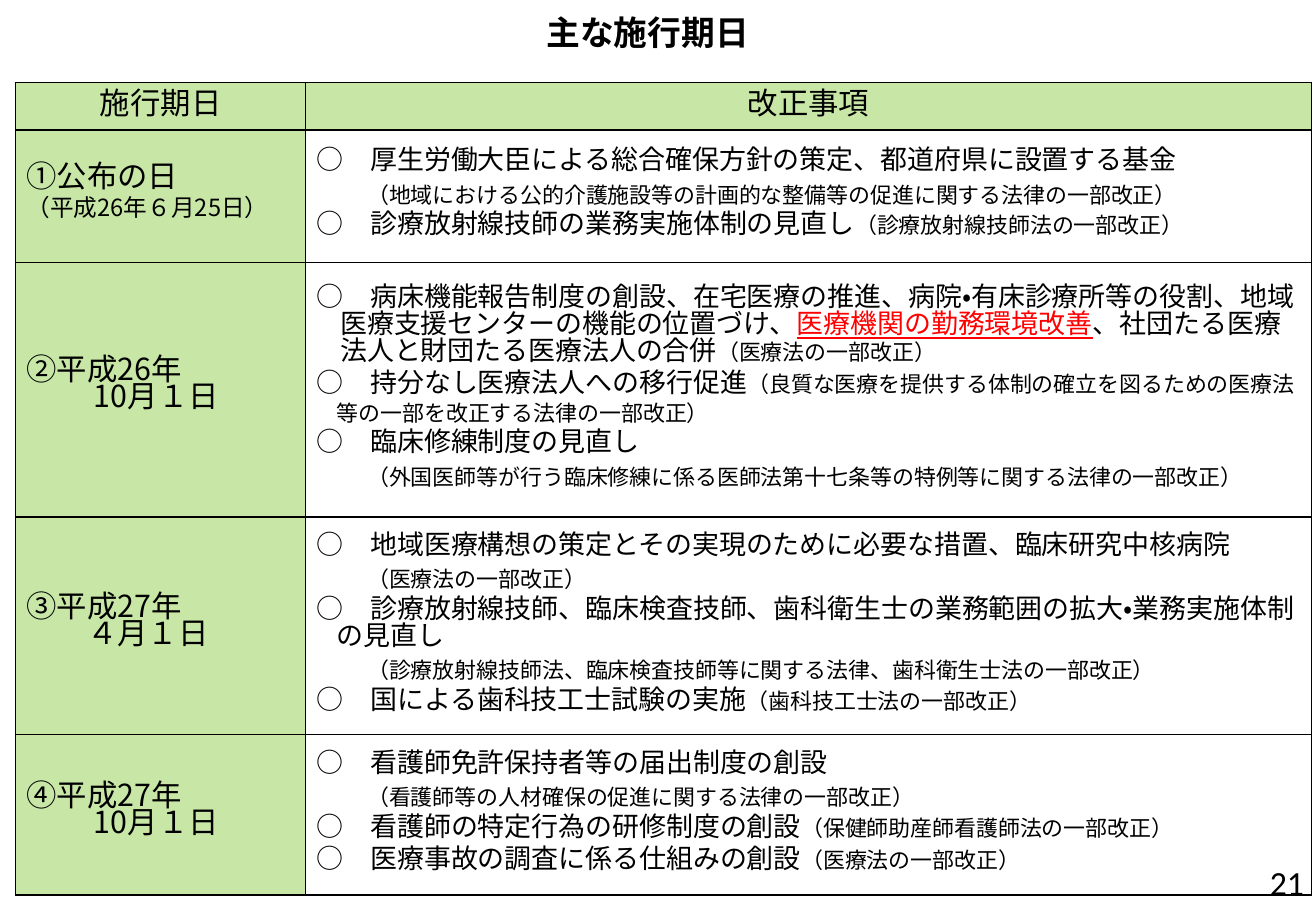
from dataclasses import dataclass

from lxml import etree
from pptx import Presentation
from pptx import util as u
from pptx.dml.color import RGBColor
from pptx.enum import lang, text
from pptx.oxml import ns

LEFT, CENTER, RIGHT, JUSTIFY = (
    text.PP_ALIGN.LEFT, text.PP_ALIGN.CENTER, text.PP_ALIGN.RIGHT, text.PP_ALIGN.JUSTIFY)


@dataclass(frozen=True)
class Theme:
    ink: str = "000000"
    alert: str = "FF0000"
    paper: str = "FFFFFF"
    green: str = "92D050"
    green_alpha: int = 50000
    heading_font: str = "Noto Sans CJK JP"
    body_font: str = "Calibri"
    title: float = 20
    date: float = 18
    item: float = 16
    small_date: float = 14
    law: float = 13
    leading: float = 16
    gap: float = 3
    border: float = 1


THEME = Theme()


@dataclass(frozen=True)
class Run:
    words: str
    size: float = THEME.item
    font: str = THEME.body_font
    color: str = THEME.ink
    bold: bool = False
    underline: bool = False


@dataclass(frozen=True)
class Line:
    runs: tuple[Run, ...]
    align: text.PP_ALIGN = LEFT
    margin: float = 0
    first: float = 0
    after: float = 0
    leading: float | None = THEME.leading


@dataclass(frozen=True)
class Stage:
    height: float
    dates: tuple[Line, ...]
    reforms: tuple[Line, ...]


def date(words: str, align: text.PP_ALIGN = LEFT, margin: float = 0,
         size: float = THEME.date) -> Line:
    return Line((Run(words, size, THEME.heading_font),), align, margin)


def law(words: str) -> Run:
    return Run(words, THEME.law)


def item(words: str, *more: Run, hang: float = 0) -> Line:
    return Line((Run("○　" + words), *more), margin=hang, first=-hang, after=THEME.gap)


def law_line(words: str) -> Line:
    return Line((law(words),), margin=30, after=THEME.gap)


def two_line_date(year: str, day: str, margin: float) -> tuple[Line, ...]:
    return date(year, JUSTIFY), date(day, JUSTIFY, margin)


HEADER_HEIGHT = 28
COLUMN_WIDTHS = (172, 596)
HEADERS = ("施行期日", "改正事項")
STAGES = (
    Stage(78.5,
          (date("①公布の日"), date("（平成26年６月25日）", size=THEME.small_date)),
          (item("厚生労働大臣による総合確保方針の策定、都道府県に設置する基金"),
           law_line("（地域における公的介護施設等の計画的な整備等の促進に関する法律の一部改正）"),
           item("診療放射線技師の業務実施体制の見直し", law("（診療放射線技師法の一部改正）")))),
    Stage(151,
          two_line_date("②平成26年", "10月１日", 40),
          (item("病床機能報告制度の創設、在宅医療の推進、病院・有床診療所等の役割、"
                "地域医療支援センターの機能の位置づけ、",
                Run("医療機関の勤務環境改善", color=THEME.alert, underline=True),
                Run("、社団たる医療法人と財団たる医療法人の合併"),
                law("（医療法の一部改正）"), hang=14),
           item("持分なし医療法人への移行促進",
                law("（良質な医療を提供する体制の確立を図るための医療法等の一部を改正する法律の一部改正）"),
                hang=12),
           item("臨床修練制度の見直し", hang=12),
           law_line("（外国医師等が行う臨床修練に係る医師法第十七条等の特例等に関する法律の一部改正）"))),
    Stage(129,
          two_line_date("③平成27年", "４月１日", 36),
          (item("地域医療構想の策定とその実現のために必要な措置、臨床研究中核病院"),
           law_line("（医療法の一部改正）"),
           item("診療放射線技師、臨床検査技師、歯科衛生士の業務範囲の拡大・業務実施体制の見直し", hang=12),
           law_line("（診療放射線技師法、臨床検査技師等に関する法律、歯科衛生士法の一部改正）"),
           item("国による歯科技工士試験の実施", law("（歯科技工士法の一部改正）")))),
    Stage(95,
          two_line_date("④平成27年", "10月１日", 40),
          (item("看護師免許保持者等の届出制度の創設"),
           law_line("（看護師等の人材確保の促進に関する法律の一部改正）"),
           item("看護師の特定行為の研修制度の創設", law("（保健師助産師看護師法の一部改正）")),
           item("医療事故の調査に係る仕組みの創設", law("（医療法の一部改正）")))),
)


def write(frame, lines: tuple[Line, ...]) -> None:
    for index, line in enumerate(lines):
        paragraph = frame.add_paragraph() if index else frame.paragraphs[0]
        paragraph.alignment = line.align
        paragraph.space_after = u.Pt(line.after)
        if line.leading:
            paragraph.line_spacing = u.Pt(line.leading)
        if line.margin:
            properties = paragraph._p.get_or_add_pPr()
            properties.set("marL", str(u.Pt(line.margin)))
            properties.set("indent", str(u.Pt(line.first)))
        for part in line.runs:
            run = paragraph.add_run()
            run.text = part.words
            run.font.name = part.font
            run.font.size = u.Pt(part.size)
            run.font.bold = part.bold
            run.font.underline = part.underline
            run.font.color.rgb = RGBColor.from_string(part.color)
            run.font.language_id = lang.MSO_LANGUAGE_ID.JAPANESE


def add_label(slide, left: float, top: float, width: float, height: float,
              line: Line, anchor: text.MSO_ANCHOR) -> None:
    frame = slide.shapes.add_textbox(*map(u.Pt, (left, top, width, height))).text_frame
    frame.word_wrap = True
    frame.vertical_anchor = anchor
    write(frame, (line,))


def fill_cell(cell, lines: tuple[Line, ...], green: bool, bottom: float = 3.6) -> None:
    cell.vertical_anchor = text.MSO_ANCHOR.MIDDLE
    cell.margin_left = cell.margin_right = u.Pt(6.5)
    cell.margin_top, cell.margin_bottom = u.Pt(3.6), u.Pt(bottom)
    write(cell.text_frame, lines)
    cell.fill.solid()
    cell.fill.fore_color.rgb = RGBColor.from_string(THEME.green if green else THEME.paper)
    properties = cell._tc.get_or_add_tcPr()
    if green:
        color = properties.find(".//" + ns.qn("a:srgbClr"))
        etree.SubElement(color, ns.qn("a:alpha"), val=str(THEME.green_alpha))
    # Borders come before the fill in the cell properties
    for index, side in enumerate(("a:lnL", "a:lnR", "a:lnT", "a:lnB")):
        border = etree.Element(ns.qn(side), w=str(u.Pt(THEME.border)))
        solid = etree.SubElement(border, ns.qn("a:solidFill"))
        etree.SubElement(solid, ns.qn("a:srgbClr"), val=THEME.ink)
        properties.insert(index, border)


def add_schedule(slide) -> None:
    heights = (HEADER_HEIGHT, *(stage.height for stage in STAGES))
    schedule = slide.shapes.add_table(
        len(heights), len(COLUMN_WIDTHS), u.Pt(9.2), u.Pt(49),
        u.Pt(sum(COLUMN_WIDTHS)), u.Pt(sum(heights))).table
    schedule.first_row = schedule.horz_banding = False
    for column, width in zip(schedule.columns, COLUMN_WIDTHS):
        column.width = u.Pt(width)
    for row, height in zip(schedule.rows, heights):
        row.height = u.Pt(height)
    for column, header in enumerate(HEADERS):
        fill_cell(schedule.cell(0, column), (date(header, CENTER),), green=True, bottom=0)
    for row, stage in enumerate(STAGES, start=1):
        fill_cell(schedule.cell(row, 0), stage.dates, green=True)
        fill_cell(schedule.cell(row, 1), stage.reforms, green=False)


def main() -> None:
    deck = Presentation()
    deck.slide_width, deck.slide_height = u.Pt(780), u.Pt(540)
    slide = deck.slides.add_slide(deck.slide_layouts[6])
    # Title
    title = Run("主な施行期日", THEME.title, THEME.heading_font, bold=True)
    add_label(slide, 3, 3.6, 762, 31.5, Line((title,), CENTER, leading=None),
              text.MSO_ANCHOR.TOP)
    # Enforcement dates and reforms
    add_schedule(slide)
    # Page number
    page = Run("21", THEME.title)
    add_label(slide, 598, 508.5, 182, 29, Line((page,), RIGHT, leading=None),
              text.MSO_ANCHOR.MIDDLE)
    deck.save("out.pptx")


if __name__ == "__main__":
    main()
